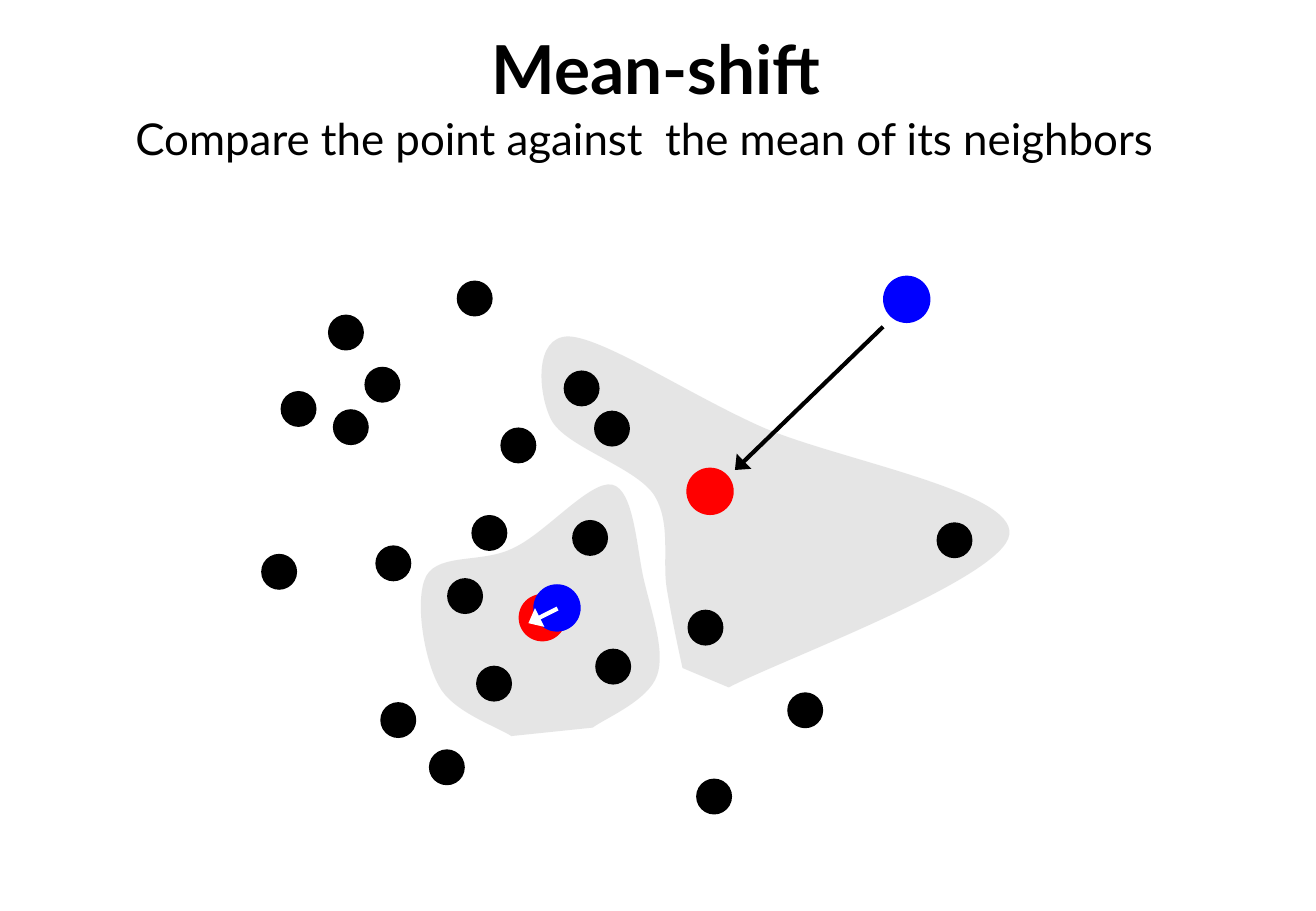
from dataclasses import dataclass
from lxml.etree import SubElement
from pptx import Presentation
from pptx.dml.color import RGBColor as RGB
from pptx.enum.shapes import MSO_CONNECTOR as CONNECTOR, MSO_SHAPE as SHAPE
from pptx.enum.text import MSO_ANCHOR as ANCHOR, MSO_AUTO_SIZE as FIT, PP_ALIGN as ALIGN
from pptx.oxml.ns import qn
from pptx.util import Pt


@dataclass(frozen=True)
class Theme:
    font: str = "Lato"
    ink: RGB = RGB(0, 0, 0)
    paper: RGB = RGB(255, 255, 255)
    point: RGB = RGB(0, 0, 255)
    mean: RGB = RGB(255, 0, 0)
    region: RGB = RGB(192, 192, 192)
    region_alpha: int = 40
    title: int = 40
    subtitle: int = 26
    arrow: float = 2.5
    dot: float = 21.3
    marker: float = 28.1


T = Theme()

SAMPLES = [
    (296.6, 253.4), (279.4, 305.3), (222.5, 323.3), (216, 217.4), (154.8, 328.3),
    (166.3, 231.8), (197.3, 242.6), (270.7, 166.3), (194.4, 186.5), (412.6, 461.5),
    (254.2, 444.2), (466.6, 410.4), (225.4, 416.2), (555.1, 309.6), (407.5, 361.4),
    (334.1, 219.6), (352.1, 243.4), (265, 342.7), (352.8, 384.5), (282.2, 394.6),
    (339.1, 308.2),
]
MARKERS = [
    (523.4, 163.4, T.point), (406.8, 277.2, T.mean),
    (307.4, 352.1, T.mean), (316.1, 346.3, T.point),
]
SHIFTS = [
    ((523.4, 193.7), (435.6, 278.6), T.ink),
    ((330.5, 360.7), (313.2, 369.4), T.paper),
]
FAR_REGION = [
    (432, 407.5),
    (460.1, 392.4), (595.4, 342.7), (598.3, 316.8),
    (601.9, 290.9), (494.6, 272.2), (450.7, 252.7),
    (407.5, 233.3), (357.8, 200.2), (337, 199.4),
    (316.1, 199.4), (319, 234), (326.9, 249.1),
    (335.5, 265), (375.8, 276.5), (387.4, 293),
    (398.2, 309.6), (392.4, 331.9), (395.3, 349.2),
    (398.2, 366.5), (402.5, 386.6), (404.6, 396),
]
NEAR_REGION = [
    (351.4, 431.3),
    (357.8, 426.2), (384.5, 415.4), (389.5, 400.3),
    (394.6, 385.9), (385.9, 362.2), (381.6, 343.4),
    (377.3, 324.7), (375.8, 290.2), (362.9, 287.3),
    (349.9, 284.4), (323.3, 316.1), (304.6, 324.7),
    (286.6, 334.1), (260.6, 327.6), (252.7, 341.3),
    (245.5, 355), (251.3, 390.2), (259.9, 406.1),
    (267.8, 421.9), (294.5, 430.6), (303.1, 436.3),
]


def apply(target, **values):
    for name, value in values.items():
        setattr(target, name, value)


def paint(sp, color):
    sp.shadow.inherit = False
    sp.fill.solid()
    sp.fill.fore_color.rgb = color
    sp.line.fill.background()


def add_dot(s, left, top, size, color):
    paint(s.shapes.add_shape(SHAPE.OVAL, Pt(left), Pt(top), Pt(size), Pt(size)), color)


def curve_segments(sp):
    lines = list(sp._element.iter(qn("a:lnTo")))
    outline = lines[0].getparent()
    for i in range(0, len(lines), 3):
        curve = SubElement(outline, qn("a:cubicBezTo"))
        for line in lines[i:i + 3]:
            curve.append(line[0])
            outline.remove(line)


def add_region(s, outline):
    start, *controls = [(Pt(x), Pt(y)) for x, y in outline]
    builder = s.shapes.build_freeform(*start)
    builder.add_line_segments(controls, close=False)
    sp = builder.convert_to_shape()
    curve_segments(sp)
    paint(sp, T.region)
    color = sp._element.spPr.find(qn("a:solidFill"))[0]
    SubElement(color, qn("a:alpha"), val=str(T.region_alpha * 1000))


def add_arrow(s, start, end, color):
    sp = s.shapes.add_connector(CONNECTOR.STRAIGHT, *map(Pt, start + end))
    sp.line.width = Pt(T.arrow)
    sp.line.color.rgb = color
    spPr = sp._element.spPr
    SubElement(spPr.find(qn("a:ln")), qn("a:tailEnd"), type="triangle", w="lg", len="med")
    SubElement(spPr, qn("a:effectLst"))


def fill_placeholder(sp, text, box, size, bold, spacing, anchor, wrap):
    apply(sp, **dict(zip(("left", "top", "width", "height"), map(Pt, box))))
    tf = sp.text_frame
    apply(tf, text=text, auto_size=FIT.SHAPE_TO_FIT_TEXT, vertical_anchor=anchor, word_wrap=wrap)
    p = tf.paragraphs[0]
    apply(p, alignment=ALIGN.CENTER, line_spacing=spacing, space_before=Pt(0))
    r = p.runs[0]
    apply(r.font, name=T.font, size=Pt(size), bold=bold)
    r.font.color.rgb = T.ink
    return p


def add_heading(s):
    fill_placeholder(s.shapes.title, "Mean-shift", (61.2, 18, 655.2, 50.4),
                     T.title, True, 0.9, ANCHOR.MIDDLE, True)
    p = fill_placeholder(s.placeholders[1],
                         "Compare the point against  the mean of its neighbors",
                         (64.8, 68.4, 635, 32.4), T.subtitle, False, 0.8, ANCHOR.TOP, False)
    pPr = p._p.get_or_add_pPr()
    for name, value in (("marL", 27), ("indent", -27)):
        pPr.set(name, str(Pt(value)))
    SubElement(pPr, qn("a:buNone"))


def main():
    prs = Presentation()
    apply(prs, slide_width=Pt(780), slide_height=Pt(540))
    s = prs.slides.add_slide(prs.slide_layouts[1])
    add_heading(s)
    for outline in (FAR_REGION, NEAR_REGION):
        add_region(s, outline)
    for left, top in SAMPLES:
        add_dot(s, left, top, T.dot, T.ink)
    for left, top, color in MARKERS:
        add_dot(s, left, top, T.marker, color)
    for start, end, color in SHIFTS:
        add_arrow(s, start, end, color)
    prs.save("out.pptx")


if __name__ == "__main__":
    main()
